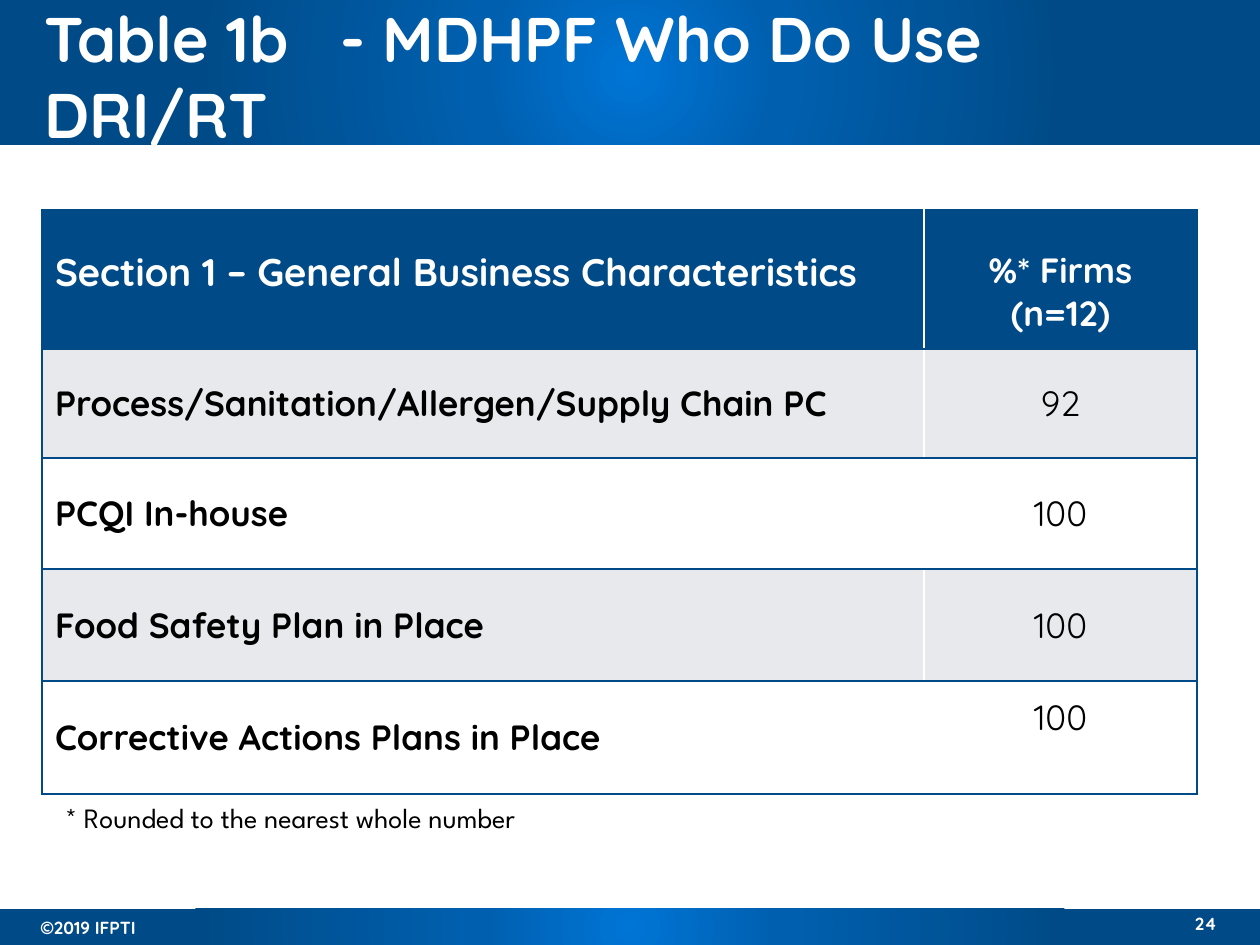
from lxml import etree
from pptx import Presentation
from pptx.dml.color import RGBColor
from pptx.enum.shapes import MSO_SHAPE as Shape
from pptx.enum.text import MSO_ANCHOR as Anchor, PP_ALIGN as Align
from pptx.oxml import parse_xml
from pptx.oxml.ns import nsdecls, qn
from pptx.util import Emu, Pt

WHITE = RGBColor(0xFF, 0xFF, 0xFF)
BLACK = RGBColor(0, 0, 0)
NAVY = RGBColor(0x00, 0x4B, 0x87)
GREY = RGBColor(0xE7, 0xE9, 0xED)
GLOW = [(0, "0075D6"), (23, "0060B0"), (69, "004B87"), (97, "004B87")]
EMU_PER_PX = 914400 / 126


def px(length):
    return Emu(round(length * EMU_PER_PX))


class SlideBuilder:
    """Draws elements in the deck's style on the current page."""

    font = "Quicksand"

    def __init__(self, page):
        self.page = page

    def style(self, para, text, size, color, bold=True, align=Align.LEFT, font=None):
        para.text = text
        para.alignment = align
        para.font.name = font or self.font
        para.font.size = Pt(size)
        para.font.bold = bold
        para.font.color.rgb = color

    def band(self, top, height):
        band = self.page.shapes.add_shape(Shape.RECTANGLE, 0, px(top), px(1260), px(height))
        band.shadow.inherit = False
        band.line.fill.background()
        stops = "".join(
            f'<a:gs pos="{place * 1000}"><a:srgbClr val="{color}"/></a:gs>'
            for place, color in GLOW)
        glow = parse_xml(
            f'<a:gradFill {nsdecls("a")} rotWithShape="1"><a:gsLst>{stops}</a:gsLst>'
            '<a:path path="circle"><a:fillToRect l="50000" t="50000" r="50000" b="50000"/>'
            '</a:path></a:gradFill>')
        band._element.spPr.find(qn("a:prstGeom")).addnext(glow)

    def text(self, left, top, width, height, text, size, color, tab=None,
             anchor=Anchor.TOP, wrap=True, **look):
        box = self.page.shapes.add_textbox(px(left), px(top), px(width), px(height))
        frame = box.text_frame
        frame.word_wrap = wrap
        frame.vertical_anchor = anchor
        para = frame.paragraphs[0]
        if tab:
            tabs = etree.SubElement(para._p.get_or_add_pPr(), qn("a:tabLst"))
            etree.SubElement(tabs, qn("a:tab"), pos=str(px(tab)), algn="l")
        self.style(para, text, size, color, **look)

    def table(self, left, top, widths, heights):
        frame = self.page.shapes.add_table(
            len(heights), len(widths), px(left), px(top), px(sum(widths)), px(sum(heights)))
        table = frame.table
        for column, width in zip(table.columns, widths):
            column.width = px(width)
        for row, height in zip(table.rows, heights):
            row.height = px(height)
        return table

    def cell(self, cell, text, size, color, fill, sides, margins, anchor, **look):
        cell.margin_left = cell.margin_right = px(13)
        cell.margin_top, cell.margin_bottom = map(px, margins)
        cell.vertical_anchor = anchor
        self.style(cell.text_frame.paragraphs[0], text, size, color, **look)
        properties = cell._tc.get_or_add_tcPr()
        for side in sides:
            properties.append(parse_xml(
                f'<a:ln{side} {nsdecls("a")} w="{Pt(1)}"><a:solidFill>'
                f'<a:srgbClr val="{NAVY}"/></a:solidFill></a:ln{side}>'))
        cell.fill.solid()
        cell.fill.fore_color.rgb = fill


def main():
    deck = Presentation()
    deck.slide_width, deck.slide_height = px(1260), px(945)
    page = deck.slides.add_slide(deck.slide_layouts[6])
    builder = SlideBuilder(page)

    # Header and footer bands
    builder.band(0, 145)
    builder.band(909, 36)
    builder.text(28, 911, 168, 34, "©2019 IFPTI", 10, WHITE)
    builder.text(1108, 907, 121, 34, "24", 10, WHITE, align=Align.RIGHT)
    builder.text(32, 16, 1174, 118, "Table 1b\t- MDHPF Who Do Use DRI/RT", 36, WHITE,
                 tab=296, anchor=Anchor.MIDDLE)

    # Table of business characteristics
    rows = [
        ("Section 1 – General Business Characteristics", "%* Firms (n=12)"),
        ("Process/Sanitation/Allergen/Supply Chain PC", "92"),
        ("PCQI In-house", "100"),
        ("Food Safety Plan in Place", "100"),
        ("Corrective Actions Plans in Place", "100"),
    ]
    table = builder.table(42, 210, [882, 273], [139, 109, 111, 112, 113])
    for index, (label, share) in enumerate(rows):
        header = index == 0
        last = index == len(rows) - 1
        fill = NAVY if header else GREY if index % 2 else WHITE
        color = WHITE if header else BLACK
        margins = (38, 13) if header else (15, 15)
        anchor = Anchor.TOP if header else Anchor.MIDDLE
        builder.cell(table.cell(index, 0), label, 22 if header else 20, color, fill,
                     "LTB", margins, anchor,
                     align=Align.LEFT if header else Align.JUSTIFY)
        builder.cell(table.cell(index, 1), share, 20, color, fill,
                     "RTB", margins, Anchor.TOP if last else anchor,
                     bold=header, align=Align.CENTER)

    # Footnote
    builder.text(53, 794, 577, 47, "* Rounded to the nearest whole number", 16, BLACK,
                 wrap=False, bold=False, font="League Spartan")

    deck.save("out.pptx")


if __name__ == "__main__":
    main()
